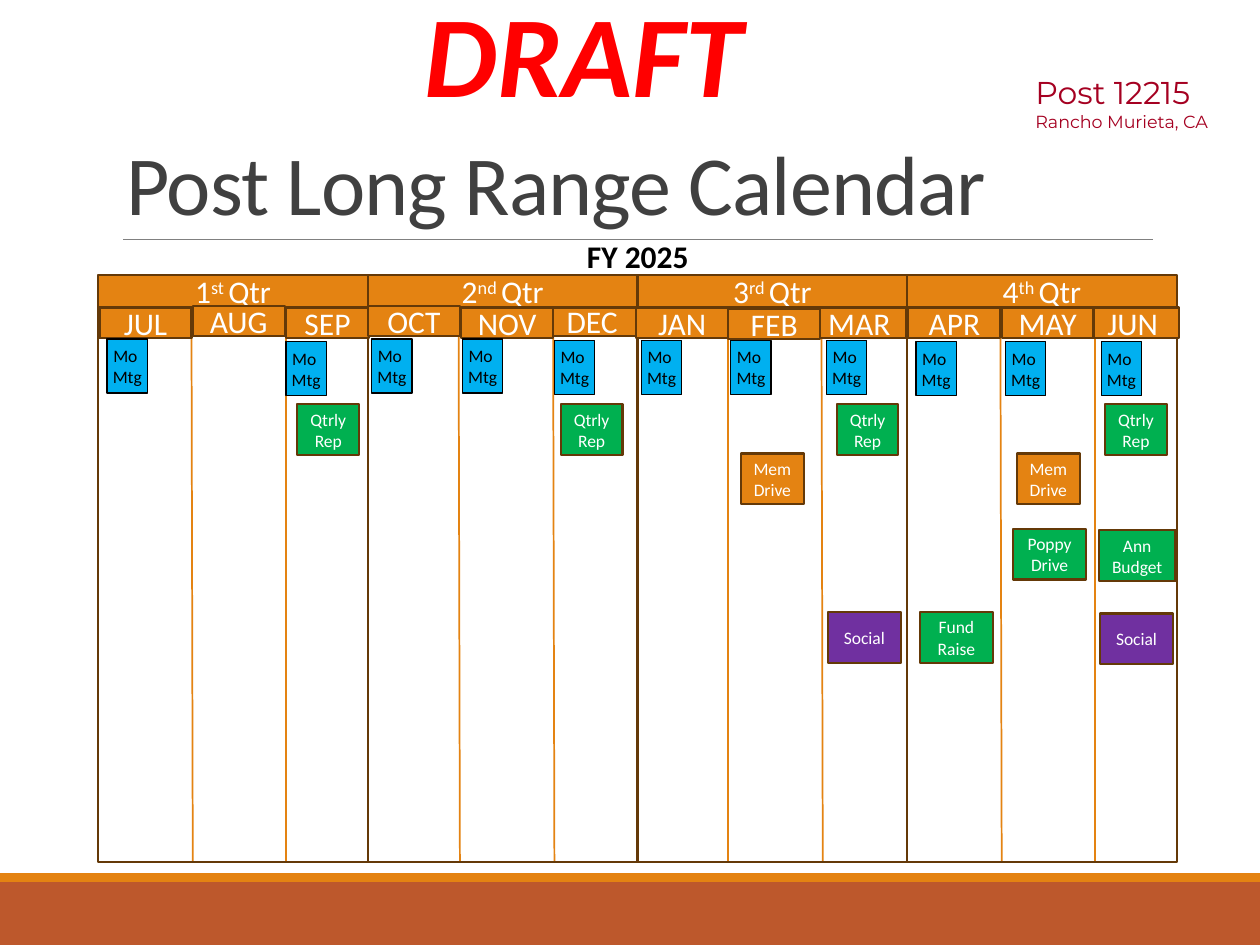
from lxml.etree import SubElement
from pptx import Presentation
from pptx.dml.color import RGBColor
from pptx.enum.shapes import MSO_CONNECTOR, MSO_SHAPE
from pptx.enum.text import MSO_ANCHOR, MSO_AUTO_SIZE, PP_ALIGN
from pptx.oxml import parse_xml
from pptx.oxml.ns import nsdecls, qn
from pptx.util import Inches, Pt

WHITE = RGBColor(0xFF, 0xFF, 0xFF)
BLACK = RGBColor(0x00, 0x00, 0x00)
RED = RGBColor(0xFF, 0x00, 0x00)
CRIMSON = RGBColor(0xA5, 0x00, 0x21)
CHARCOAL = RGBColor(0x40, 0x40, 0x40)
GRAY = RGBColor(0x80, 0x80, 0x80)
ORANGE = RGBColor(0xE4, 0x83, 0x12)
RUST = RGBColor(0xBD, 0x58, 0x2C)
BROWN = RGBColor(0x64, 0x39, 0x08)
BLUE = RGBColor(0x00, 0xB0, 0xF0)
GREEN = RGBColor(0x00, 0xB0, 0x50)
PURPLE = RGBColor(0x70, 0x30, 0xA0)

QUARTER_LEFT, QUARTER_WIDTH = 0.78, 2.14
ORDINALS = ("1^st ^Qtr", "2^nd ^Qtr", "3^rd ^Qtr", "4^th ^Qtr")

# Top and bottom x of each line between two months
SEPARATORS = ((1.52, 1.53), (2.27, 2.27), (3.64, 3.65), (4.39, 4.4),
              (5.78, 5.78), (6.52, 6.53), (7.94, 7.95), (8.69, 8.69))

# Month name, left, top, width; later ones lie on top of earlier ones
MONTHS = (("JUL", 0.79, 2.44, 0.73), ("AUG", 1.53, 2.43, 0.73),
          ("SEP", 2.27, 2.44, 0.66), ("OCT", 2.92, 2.43, 0.73),
          ("NOV", 3.66, 2.44, 0.73), ("MAR", 6.45, 2.44, 0.74),
          ("JAN", 5.05, 2.44, 0.73), ("FEB", 5.78, 2.45, 0.73),
          ("JUN", 8.62, 2.44, 0.74), ("APR", 7.21, 2.44, 0.73),
          ("MAY", 7.95, 2.44, 0.73))

# Left and top of each monthly meeting
MEETINGS = ((0.85, 2.69), (2.27, 2.71), (2.95, 2.69), (3.67, 2.69),
            (4.4, 2.7), (5.09, 2.7), (5.8, 2.7), (6.56, 2.7),
            (7.27, 2.71), (7.98, 2.71), (8.74, 2.71))

# Event text, colour, width, and the left and top of each occurrence
EVENTS = (("Mem\nDrive", ORANGE, 0.5, ((5.88, 3.6), (8.07, 3.6))),
          ("Poppy\nDrive", GREEN, 0.58, ((8.04, 4.2),)),
          ("Fund\nRaise", GREEN, 0.58, ((7.3, 4.86),)),
          ("Social", PURPLE, 0.58, ((6.57, 4.86), (8.73, 4.87))),
          ("Ann\nBudget", GREEN, 0.61, ((8.72, 4.21),)),
          ("Qtrly\nRep", GREEN, 0.49,
           ((4.45, 3.21), (2.36, 3.21), (6.64, 3.21), (8.77, 3.21))))


def write_text(paragraph, text, size=18, color=WHITE, font="Calibri",
               bold=False, italic=False, align=PP_ALIGN.CENTER):
    """Write one paragraph; text between ^ marks is superscript."""
    paragraph.alignment = align
    for index, piece in enumerate(text.split("^")):
        run = paragraph.add_run()
        run.text = piece
        run.font.name = font
        run.font.size = Pt(size)
        run.font.color.rgb = color
        run.font.bold = bold
        run.font.italic = italic
        if index % 2:
            run._r.get_or_add_rPr().set("baseline", "30000")


def add_box(slide, left, top, width, height, text="", fill=None, line=BROWN,
            line_width=1.25, anchor=MSO_ANCHOR.MIDDLE, wrap=True, **text_format):
    shape = slide.shapes.add_shape(MSO_SHAPE.RECTANGLE, Inches(left), Inches(top),
                                   Inches(width), Inches(height))
    shape.shadow.inherit = False
    if fill is None:
        shape.fill.background()
    else:
        shape.fill.solid()
        shape.fill.fore_color.rgb = fill
    if line is None:
        shape.line.fill.background()
    else:
        shape.line.color.rgb = line
        shape.line.width = Pt(line_width)
    if text:
        frame = shape.text_frame
        frame.word_wrap = wrap
        frame.vertical_anchor = anchor
        frame.margin_left = frame.margin_right = 0
        for index, row in enumerate(text.split("\n")):
            paragraph = frame.add_paragraph() if index else frame.paragraphs[0]
            write_text(paragraph, row, **text_format)
    return shape


def add_label(slide, left, top, width, height):
    """Add an unwrapped text box and return its text frame."""
    box = slide.shapes.add_textbox(Inches(left), Inches(top),
                                   Inches(width), Inches(height))
    box.text_frame.word_wrap = False
    box.text_frame.auto_size = MSO_AUTO_SIZE.SHAPE_TO_FIT_TEXT
    return box.text_frame


def add_line(slide, start, end, color, width):
    connector = slide.shapes.add_connector(
        MSO_CONNECTOR.STRAIGHT, *(Inches(value) for value in start + end))
    connector.line.color.rgb = color
    connector.line.width = Pt(width)
    SubElement(connector._element.spPr, qn("a:effectLst"))


def add_title(slide):
    title = slide.shapes.title
    title.left, title.top = Inches(0.9), Inches(0.31)
    title.width, title.height = Inches(8.25), Inches(1.59)
    frame = title.text_frame
    frame.word_wrap = True
    frame.auto_size = MSO_AUTO_SIZE.NONE
    frame.vertical_anchor = MSO_ANCHOR.BOTTOM
    paragraph = frame.paragraphs[0]
    paragraph.line_spacing = 0.85
    write_text(paragraph, "Post Long Range Calendar", size=48, color=CHARCOAL,
               align=PP_ALIGN.LEFT)
    paragraph.runs[0]._r.get_or_add_rPr().set("spc", "-50")


def add_header(slide):
    add_line(slide, (0.98, 1.9), (9.15, 1.9), GRAY, 0.5)

    post = add_label(slide, 8.12, 0.53, 1.74, 0.57)
    crimson = {"color": CRIMSON, "font": "Montserrat", "align": PP_ALIGN.LEFT}
    write_text(post.paragraphs[0], "Post 12215", **crimson)
    write_text(post.add_paragraph(), "Rancho Murieta, CA", size=10, **crimson)

    draft = add_label(slide, 3.26, -0.19, 2.75, 1.21).paragraphs[0]
    write_text(draft, "DRAFT", size=66, color=RED, bold=True, italic=True)
    outline = parse_xml(f'<a:ln {nsdecls("a")} w="6600"><a:solidFill>'
                        f'<a:srgbClr val="{RUST}"/></a:solidFill></a:ln>')
    draft.runs[0]._r.get_or_add_rPr().insert(0, outline)

    year = add_label(slide, 4.56, 1.83, 1.01, 0.4)
    write_text(year.paragraphs[0], "FY 2025", color=BLACK, bold=True,
               align=PP_ALIGN.LEFT)


def add_month(slide, name, left, top, width):
    add_box(slide, left, top, width, 0.24, name, fill=ORANGE)


def add_calendar(slide):
    for top_x, bottom_x in SEPARATORS:
        add_line(slide, (top_x, 2.56), (bottom_x, 6.84), ORANGE, 1)
    add_month(slide, "DEC", 4.33, 2.43, 0.74)  # lies under the quarter frames
    for index, ordinal in enumerate(ORDINALS):
        left = QUARTER_LEFT + index * QUARTER_WIDTH
        add_box(slide, left, 2.18, QUARTER_WIDTH, 0.26, ordinal, fill=ORANGE)
        add_box(slide, left, 2.44, QUARTER_WIDTH, 4.4)
    for month in MONTHS:
        add_month(slide, *month)


def add_events(slide):
    for left, top in MEETINGS:
        add_box(slide, left, top, 0.32, 0.43, "Mo \nMtg", fill=BLUE, line=BLACK,
                line_width=0.75, anchor=MSO_ANCHOR.TOP, wrap=False,
                size=10, color=BLACK)
    for text, fill, width, places in EVENTS:
        for left, top in places:
            add_box(slide, left, top, width, 0.4, text, fill=fill, size=10)


def main():
    presentation = Presentation()
    presentation.slide_width, presentation.slide_height = Inches(10), Inches(7.5)
    slide = presentation.slides.add_slide(presentation.slide_layouts[5])

    # Bottom bands
    add_box(slide, 0, 7, 10, 0.5, fill=RUST, line=None)
    add_box(slide, 0, 6.93, 10, 0.07, fill=ORANGE, line=None)

    add_title(slide)
    add_header(slide)
    add_calendar(slide)
    add_events(slide)
    presentation.save("out.pptx")


if __name__ == "__main__":
    main()
